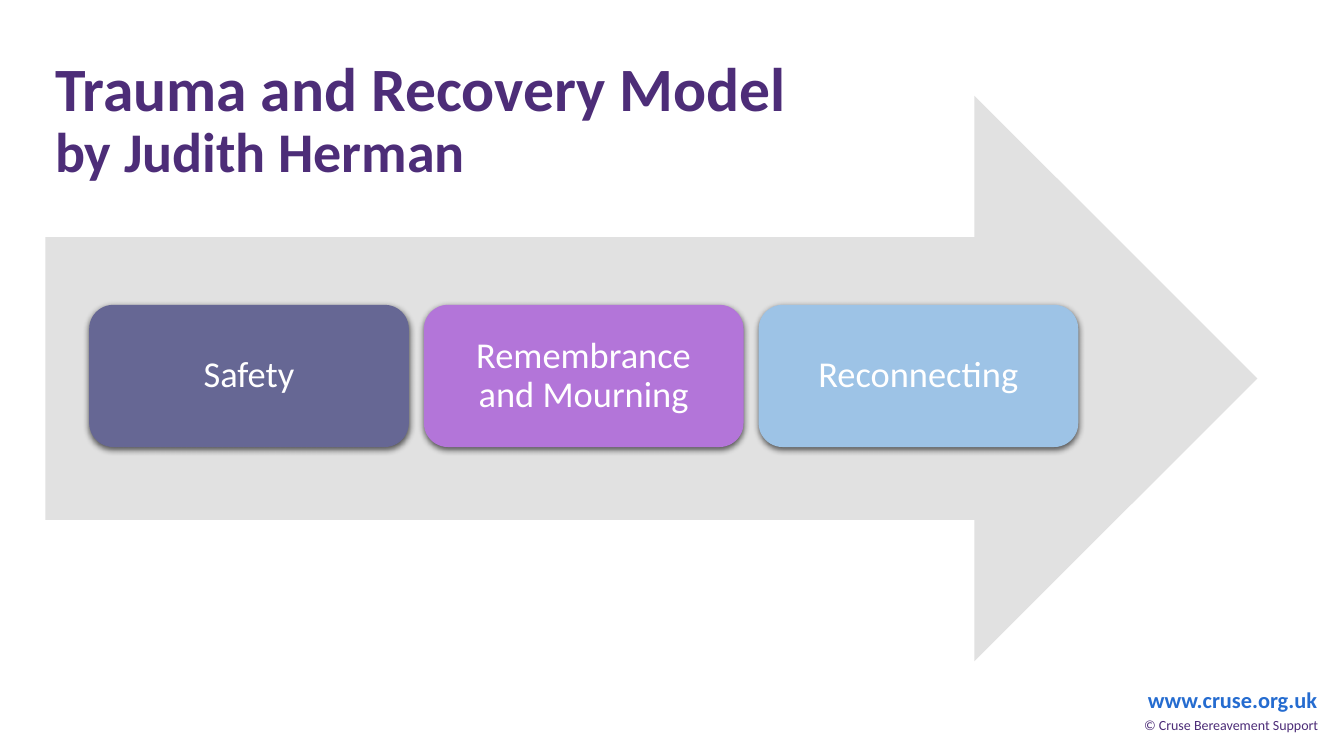
from lxml import etree
from pptx import Presentation
from pptx import util as u
from pptx.dml.color import RGBColor
from pptx.enum import shapes, text
from pptx.oxml.ns import qn

PURPLE = "4D2D78"
CENTER = text.PP_ALIGN.CENTER
STAGES = [
    ("Safety", "666794"),
    ("Remembrance and Mourning", "B375D9"),
    ("Reconnecting", "9DC3E6"),
]


def rgb(value):
    return RGBColor.from_string(value)


def set_values(target, values):
    for name, value in values.items():
        setattr(target, name, value)


class Deck:
    font = "Calibri"

    def __init__(self, width, height):
        self.prs = Presentation()
        set_values(self.prs, {"slide_width": u.Inches(width), "slide_height": u.Inches(height)})
        self.slide = self.prs.slides.add_slide(self.prs.slide_layouts[6])

    def fill_text(self, frame, lines, color, bold=False, align=None, spacing=None,
                  insets=(0.1, 0.05)):
        """Put (wording, size) lines into one paragraph, parted by line breaks."""
        across, down = map(u.Inches, insets)
        set_values(frame, {
            "word_wrap": True,
            "vertical_anchor": text.MSO_ANCHOR.MIDDLE,
            "margin_left": across, "margin_right": across,
            "margin_top": down, "margin_bottom": down,
        })
        paragraph = frame.paragraphs[0]
        set_values(paragraph, {"alignment": align, "line_spacing": spacing})
        for index, (wording, size) in enumerate(lines):
            if index:
                paragraph.add_line_break()
            run = paragraph.add_run()
            run.text = wording
            set_values(run.font, {"name": self.font, "size": u.Pt(size), "bold": bold})
            run.font.color.rgb = rgb(color)

    def label(self, box, lines, color, **style):
        frame = self.slide.shapes.add_textbox(*map(u.Inches, box)).text_frame
        self.fill_text(frame, lines, color, **style)

    def block(self, preset, box, fill):
        shape = self.slide.shapes.add_shape(preset, *map(u.Inches, box))
        shape.shadow.inherit = False
        shape.fill.solid()
        shape.fill.fore_color.rgb = rgb(fill)
        shape.line.fill.background()
        return shape

    def stage(self, box, name, color):
        card = self.block(shapes.MSO_SHAPE.ROUNDED_RECTANGLE, box, color)
        card.line.color.rgb = rgb(color)
        card.line.width = u.Pt(0.75)
        self.drop_shadow(card)
        self.fill_text(card.text_frame, [(name, 26)], "FFFFFF",
                       align=CENTER, spacing=0.9, insets=(0.19, 0.18))

    def drop_shadow(self, shape):
        effects = shape._element.spPr.find(qn("a:effectLst"))
        shadow = etree.SubElement(effects, qn("a:outerShdw"), blurRad=str(u.Pt(4.5)),
                                  dist=str(u.Pt(1.5)), dir="5400000", rotWithShape="0")
        color = etree.SubElement(shadow, qn("a:srgbClr"), val="000000")
        etree.SubElement(color, qn("a:alpha"), val="63000")


def main():
    deck = Deck(13.33, 7.5)
    deck.label((11.26, 6.76, 1.93, 0.37), [("www.cruse.org.uk", 16)], "256CD0",
               bold=True, align=CENTER)
    deck.label((11.2, 7.06, 2.02, 0.27), [("© Cruse Bereavement Support", 10)], PURPLE,
               align=CENTER)
    deck.label((0.45, 0.48, 11.5, 1.45),
               [("Trauma and Recovery Model", 44), ("by Judith Herman", 40)], PURPLE,
               bold=True, spacing=0.9)
    deck.block(shapes.MSO_SHAPE.RIGHT_ARROW, (0.45, 0.95, 12.02, 5.61), "E1E1E1")

    width, gap = 3.16, 0.16
    for index, (name, color) in enumerate(STAGES):
        deck.stage((0.89 + index * (width + gap), 3.03, width, 1.4), name, color)
    deck.prs.save("out.pptx")


if __name__ == "__main__":
    main()
